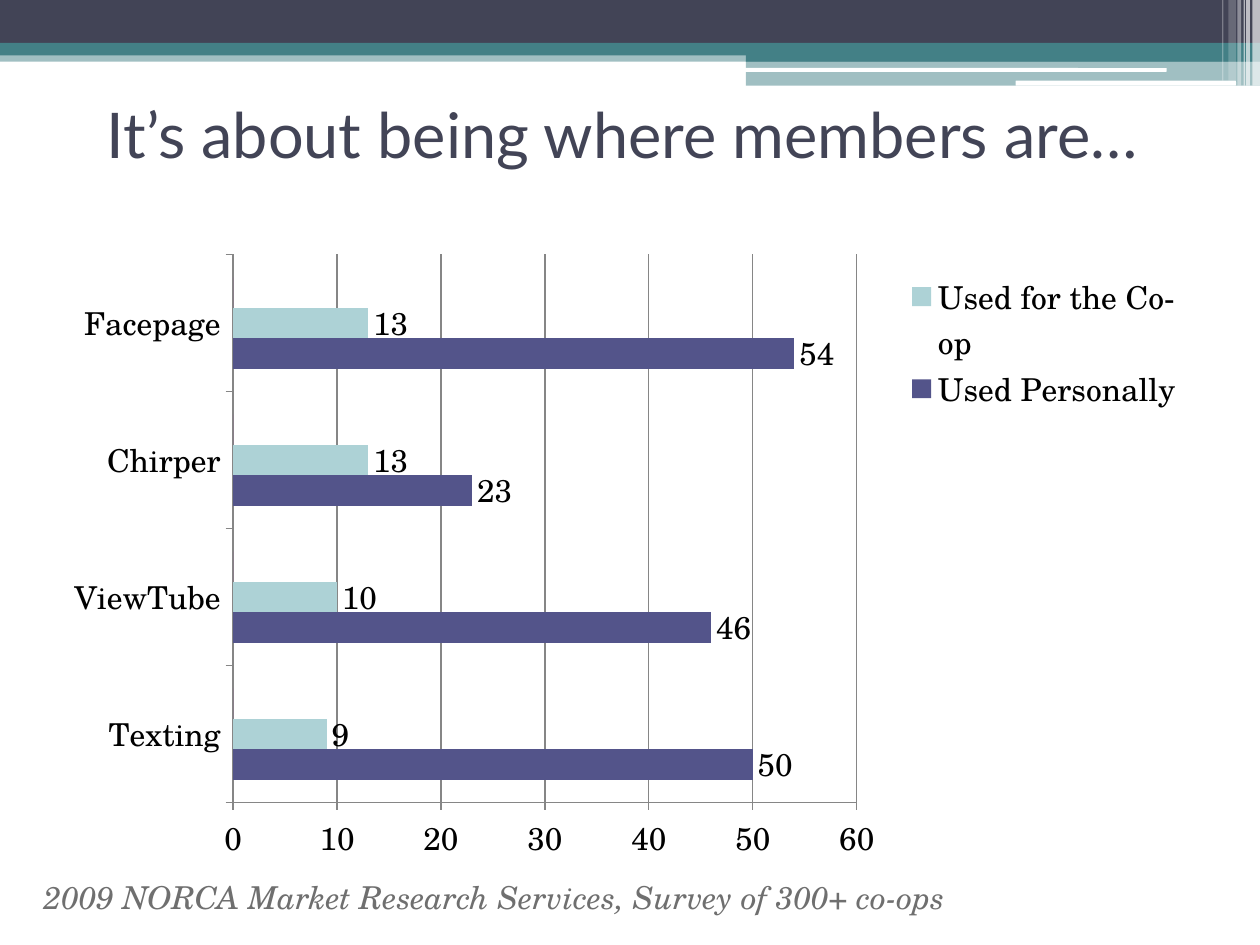
from dataclasses import dataclass

from lxml import etree
from pptx import Presentation
from pptx.chart.data import CategoryChartData
from pptx.dml.color import RGBColor
from pptx.enum.chart import XL_CHART_TYPE, XL_LABEL_POSITION, XL_LEGEND_POSITION, XL_TICK_MARK
from pptx.enum.shapes import MSO_SHAPE
from pptx.enum.text import MSO_ANCHOR
from pptx.oxml.ns import qn
from pptx.util import Inches, Pt

BAR_CLUSTERED = XL_CHART_TYPE.BAR_CLUSTERED
OUTSIDE_END = XL_LABEL_POSITION.OUTSIDE_END
LEGEND_RIGHT = XL_LEGEND_POSITION.RIGHT
TICK_OUTSIDE = XL_TICK_MARK.OUTSIDE
RECTANGLE = MSO_SHAPE.RECTANGLE
ROUNDED = MSO_SHAPE.ROUNDED_RECTANGLE
MIDDLE = MSO_ANCHOR.MIDDLE
TOP = MSO_ANCHOR.TOP


@dataclass(frozen=True)
class Theme:
    """Colours, fonts and type sizes of the slide."""
    dark: str = "424456"
    teal: str = "438086"
    white: str = "FFFFFF"
    black: str = "000000"
    source: str = "6F6F6F"
    axis: str = "868686"
    personal: str = "53548A"
    coop: str = "ADD2D6"
    spare: str = "A04DA3"
    title_font: str = "Lato"
    body_font: str = "TeX Gyre Schola"
    title_size: int = 36
    body_size: int = 18


THEME = Theme()

HEADER_BANDS = [
    (0, 0.4, 10, 0.09, THEME.teal, 50),
    (0, 0, 10, 0.34, THEME.dark, 100),
    (0, 0.34, 10, 0.1, THEME.teal, 100),
    (5.92, 0.39, 4.08, 0.1, THEME.teal, 100),
    (5.92, 0.48, 4.08, 0.2, THEME.teal, 50),
]
HEADER_LINES = [(5.91, 0.54, 3.35, 0.03), (8.06, 0.64, 1.75, 0.04)]
EDGE_STRIPES = [
    (9.94, 0.06, 0.68, 65),
    (9.89, 0.03, 0.68, 65),
    (9.87, 0.01, 0.68, 60),
    (9.82, 0.03, 0.68, 40),
    (9.75, 0.06, 0.64, 20),
    (9.7, 0.01, 0.64, 30),
]
CATEGORIES = ["Texting", "ViewTube", "Chirper", "Facepage"]
SERIES = [
    ("Used Personally", [50, 46, 23, 54], THEME.personal, True),
    ("Used for the Co-op", [9, 10, 13, 13], THEME.coop, True),
    (" 2", [0, 0, 0, 0], THEME.spare, False),
]


def rgb(value):
    """Turn a hex string into a colour."""
    return RGBColor.from_string(value)


def add_band(page, left, top, width, height, color, opacity=100, kind=RECTANGLE):
    """Add a borderless filled bar, see-through below 100 percent opacity."""
    band = page.shapes.add_shape(kind, Inches(left), Inches(top), Inches(width), Inches(height))
    band.shadow.inherit = False
    band.line.fill.background()
    band.fill.solid()
    band.fill.fore_color.rgb = rgb(color)
    if opacity < 100:
        color_node = band.fill._xPr.find(qn("a:solidFill"))[0]
        etree.SubElement(color_node, qn("a:alpha"), val=str(opacity * 1000))
    return band


def add_header(page):
    """Draw the bands, lines and stripes along the top edge."""
    for band in HEADER_BANDS:
        add_band(page, *band)
    for line in HEADER_LINES:
        add_band(page, *line, THEME.white, kind=ROUNDED)
    for left, width, height, opacity in EDGE_STRIPES:
        add_band(page, left, 0, width, height, THEME.white, opacity)


def add_text(page, left, top, width, height, text, font, size, color, anchor=TOP, italic=False):
    """Add a one-paragraph text box."""
    box = page.shapes.add_textbox(Inches(left), Inches(top), Inches(width), Inches(height))
    frame = box.text_frame
    frame.word_wrap = True
    frame.vertical_anchor = anchor
    span = frame.paragraphs[0].add_run()
    span.text = text
    span.font.name = font
    span.font.size = Pt(size)
    span.font.italic = italic
    span.font.color.rgb = rgb(color)


def make_layout(left, top, width, height, inner=False):
    """Build a manual chart layout from fractions of the chart area."""
    layout = etree.Element(qn("c:layout"))
    manual = etree.SubElement(layout, qn("c:manualLayout"))
    settings = [("layoutTarget", "inner")] if inner else []
    settings += [("xMode", "edge"), ("yMode", "edge")]
    settings += [("x", left), ("y", top), ("w", width), ("h", height)]
    for tag, value in settings:
        etree.SubElement(manual, qn(f"c:{tag}"), val=str(value))
    return layout


def style_series(series, color, labelled):
    """Colour a series and show its values at the bar ends."""
    series.format.fill.solid()
    series.format.fill.fore_color.rgb = rgb(color)
    series.invert_if_negative = False
    if labelled:
        series.data_labels.show_value = True
        series.data_labels.position = OUTSIDE_END


def style_axes(chart):
    """Set scale, ticks, gridlines and line colours."""
    value_axis = chart.value_axis
    value_axis.minimum_scale, value_axis.maximum_scale, value_axis.major_unit = 0, 60, 10
    value_axis.has_major_gridlines = True
    for axis in (value_axis, chart.category_axis):
        axis.major_tick_mark = TICK_OUTSIDE
        axis.format.line.color.rgb = rgb(THEME.axis)
    value_axis.major_gridlines.format.line.color.rgb = rgb(THEME.axis)


def style_legend(chart):
    """Place the legend and hide the entry of the spare series."""
    chart.has_legend = True
    legend = chart.legend
    legend.position = LEGEND_RIGHT
    legend.include_in_layout = False
    node = legend._element
    for old in node.findall(qn("c:layout")):
        node.remove(old)
    entry = etree.Element(qn("c:legendEntry"))
    etree.SubElement(entry, qn("c:idx"), val="0")
    etree.SubElement(entry, qn("c:delete"), val="1")
    position = node.find(qn("c:legendPos"))
    position.addnext(entry)
    entry.addnext(make_layout(0.74, 0.05, 0.25, 0.22))


def add_usage_chart(page):
    """Add the bar chart of personal and co-op use."""
    data = CategoryChartData()
    data.categories = CATEGORIES
    for name, values, _, _ in SERIES:
        data.add_series(name, values)
    frame = page.shapes.add_chart(BAR_CLUSTERED, Inches(0.5), Inches(1.92), Inches(9), Inches(5), data)
    chart = frame.chart
    chart.has_title = False
    chart.font.name = THEME.body_font
    chart.font.size = Pt(THEME.body_size)
    chart.font.color.rgb = rgb(THEME.black)
    plot = chart.plots[0]
    plot.gap_width = 150
    plot.vary_by_categories = False
    for series, (_, _, color, labelled) in zip(plot.series, SERIES):
        style_series(series, color, labelled)
    style_axes(chart)
    style_legend(chart)
    area = chart._chartSpace.find(".//" + qn("c:plotArea"))
    for old in area.findall(qn("c:layout")):
        area.remove(old)
    area.insert(0, make_layout(0.15, 0.02, 0.55, 0.87, inner=True))


def main():
    """Build and save the slide."""
    deck = Presentation()
    deck.slide_width, deck.slide_height = Inches(10), Inches(7.5)
    page = deck.slides.add_slide(deck.slide_layouts[6])
    add_header(page)
    add_text(page, 0.75, 0.67, 8.75, 0.77, "It’s about being where members are…",
             THEME.title_font, THEME.title_size, THEME.dark, anchor=MIDDLE)
    add_usage_chart(page)
    add_text(page, 0.25, 6.92, 8.92, 0.4, "2009 NORCA Market Research Services, Survey of 300+ co-ops",
             THEME.body_font, THEME.body_size, THEME.source, italic=True)
    deck.save("out.pptx")


if __name__ == "__main__":
    main()
